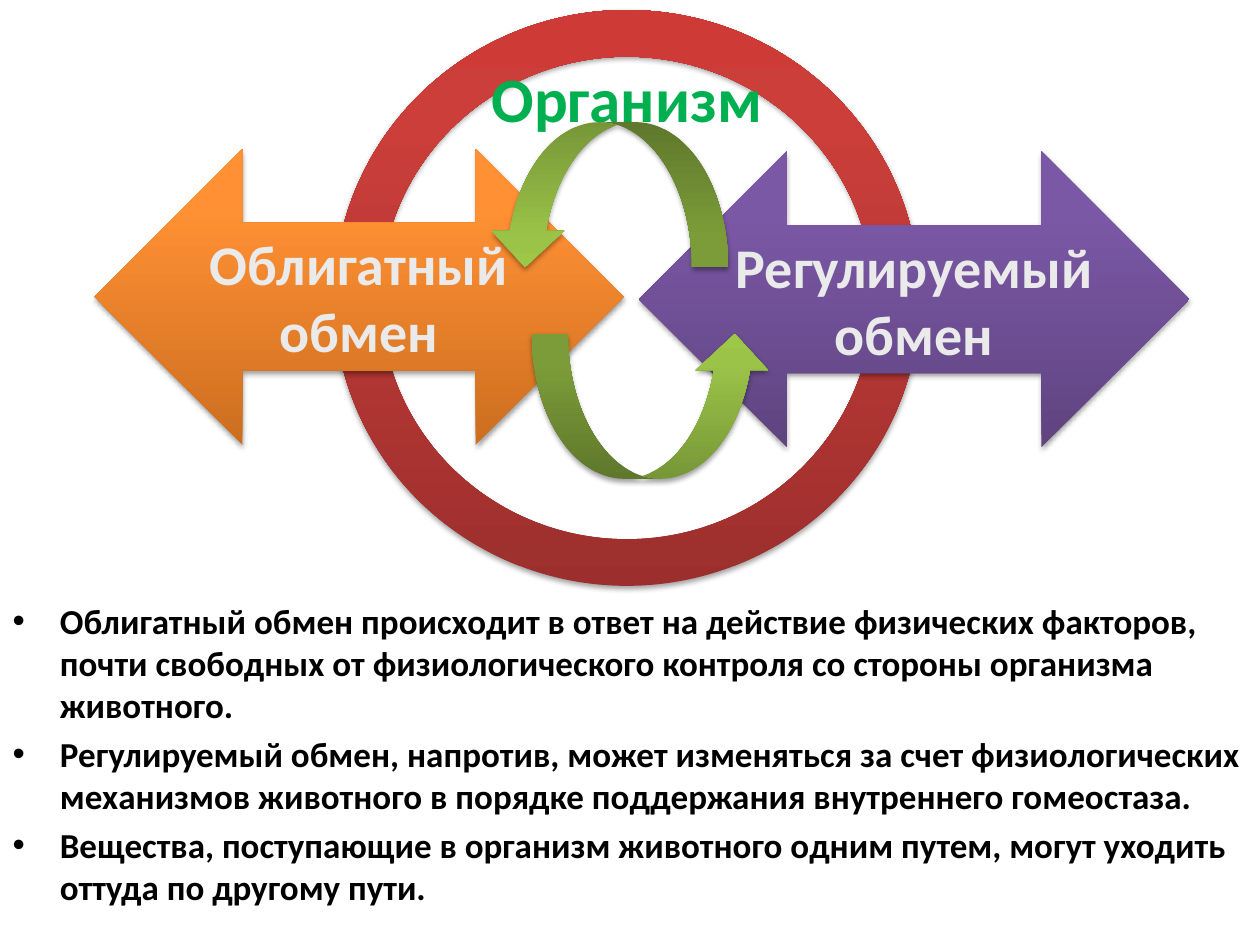
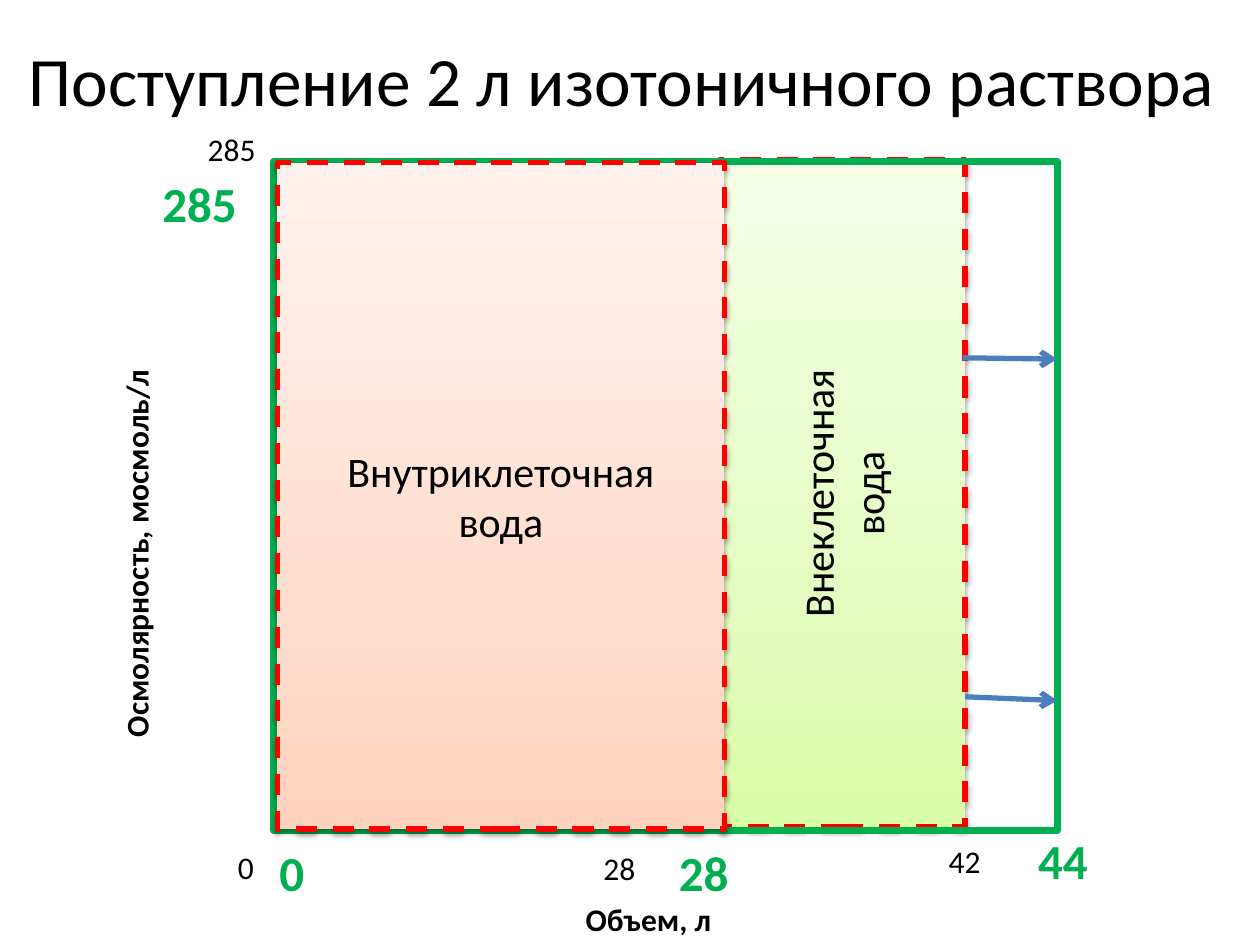
"""Builds two slides on water exchange of the organism and on isotonic intake."""
import copy

import lxml.etree
import pptx
import pptx.dml.color
import pptx.enum.dml
import pptx.enum.shapes
import pptx.enum.text
import pptx.oxml
import pptx.oxml.ns
import pptx.util

FONT = "Calibri"
BLACK, WHITE, PALE = "000000", "FFFFFF", "EAEAEA"
GREEN, RED, BLUE = "00B050", "FF0000", "4B7EBC"
SHAPES = pptx.enum.shapes.MSO_SHAPE
ANCHORS = pptx.enum.text.MSO_ANCHOR
CENTER = pptx.enum.text.PP_ALIGN.CENTER
FIT = pptx.enum.text.MSO_AUTO_SIZE
qn = pptx.oxml.ns.qn

deck = pptx.Presentation()
deck.slide_width = pptx.util.Inches(10)
deck.slide_height = pptx.util.Inches(7.5)
column = deck.slide_width / 100
row = deck.slide_height / 75


def color(value):
    """Turn a hex string into a colour."""
    return pptx.dml.color.RGBColor.from_string(value)


def add_block(page, kind, place, stops, lines=(), size=32, ink=PALE, bold=True, edge=None):
    """Add a shape with a vertical gradient, a soft shadow and centred lines."""
    left, top, width, height = place
    block = page.shapes.add_shape(
        kind, int(left * column), int(top * row), int(width * column), int(height * row))
    block.fill.gradient()
    block.fill.gradient_angle = 90
    stop_list = block._element.spPr.find(".//" + qn("a:gsLst"))
    stop_list.append(copy.deepcopy(stop_list[0]))
    for stop, (position, shade) in zip(block.fill.gradient_stops, stops):
        stop.position = position
        stop.color.rgb = color(shade)
    if edge:
        block.line.color.rgb = color(edge)
        block.line.width = pptx.util.Pt(3)
        block.line.dash_style = pptx.enum.dml.MSO_LINE.DASH
    else:
        block.line.fill.background()
    block.shadow.inherit = False
    effects = block._element.spPr.find(qn("a:effectLst"))
    shadow = lxml.etree.SubElement(
        effects, qn("a:outerShdw"), blurRad=str(pptx.util.Pt(3.1)),
        dist=str(pptx.util.Pt(1.7)), dir="5400000", rotWithShape="0")
    shade = lxml.etree.SubElement(shadow, qn("a:srgbClr"), val=BLACK)
    lxml.etree.SubElement(shade, qn("a:alpha"), val="36000")
    frame = block.text_frame
    frame.word_wrap = True
    frame.vertical_anchor = ANCHORS.MIDDLE
    for index, line in enumerate(lines):
        para = frame.add_paragraph() if index else frame.paragraphs[0]
        para.text = line
        para.alignment = CENTER
        para.font.name = FONT
        para.font.size = pptx.util.Pt(size)
        para.font.bold = bold
        para.font.color.rgb = color(ink)
    return block


exchange = deck.slides.add_slide(deck.slide_layouts[1])
intake = deck.slides.add_slide(deck.slide_layouts[5])
for page in (exchange, intake):
    page.background.fill.solid()
    page.background.fill.fore_color.rgb = color(WHITE)

heading = exchange.shapes.title._element
heading.getparent().remove(heading)
body = exchange.placeholders[1]
body.left, body.top = 0, int(47.1 * row)
body.width, body.height = deck.slide_width, int(27.9 * row)
body.text_frame.auto_size = FIT.NONE
statements = (
    "Облигатный обмен происходит в ответ на действие физических факторов, почти "
    "свободных от физиологического контроля со стороны организма животного.",
    "Регулируемый обмен, напротив, может изменяться за счет физиологических "
    "механизмов животного в порядке поддержания внутреннего гомеостаза.",
    "Вещества, поступающие в организм животного одним путем, могут уходить "
    "оттуда по другому пути.",
)
for index, statement in enumerate(statements):
    para = body.text_frame.add_paragraph() if index else body.text_frame.paragraphs[0]
    para.text = statement
    para.space_before = pptx.util.Pt(4 if index else 0)
    para.font.name = FONT
    para.font.size = pptx.util.Pt(20)
    para.font.bold = True
    para.font.color.rgb = color(BLACK)

ring = add_block(exchange, SHAPES.DONUT, (26.5, 0.8, 46.5, 45.7),
                 ((0, "9C2F2D"), (0.8, "CB3E3A"), (1, "CE3B37")))
ring.adjustments[0] = 0.081
caption = exchange.shapes.add_textbox(
    ring.left, int(4.2 * row), ring.width, int(7 * row))
caption.text_frame.word_wrap = True
para = caption.text_frame.paragraphs[0]
para.text = "Организм"
para.alignment = CENTER
para.font.name = FONT
para.font.size = pptx.util.Pt(36)
para.font.bold = True
para.font.color.rgb = color(GREEN)

add_block(exchange, SHAPES.LEFT_RIGHT_ARROW, (7.5, 11.8, 42, 23.5),
          ((0, "CC6E20"), (0.8, "FF9034"), (1, "FF9136")), ["Облигатный обмен"])
add_block(exchange, SHAPES.LEFT_RIGHT_ARROW, (50.7, 12, 43.7, 23.5),
          ((0, "5F4480"), (0.8, "7B58A6"), (1, "7C57A8")), ["Регулируемый обмен"])
for left, top, flipped in ((42.2, 26.5, False), (38.8, 9.7, True)):
    turn = add_block(exchange, SHAPES.CURVED_UP_ARROW, (left, top, 19, 11.5),
                     ((0, "779737"), (0.8, "9BC348"), (1, "9DC746")))
    if flipped:
        turn._element.spPr.xfrm.set("flipH", "1")
        turn._element.spPr.xfrm.set("flipV", "1")

title = intake.shapes.title
title.left, title.top = 0, 0
title.width, title.height = int(98.7 * column), int(12.5 * row)
title.text_frame.auto_size = FIT.NONE
title.text_frame.vertical_anchor = ANCHORS.MIDDLE
para = title.text_frame.paragraphs[0]
para.text = "Поступление 2 л изотоничного раствора"
para.alignment = CENTER
para.font.name = FONT
para.font.size = pptx.util.Pt(39.6)
para.font.color.rgb = color(BLACK)

outside = add_block(intake, SHAPES.RECTANGLE, (57.1, 12.7, 19.5, 52.9),
                    ((0, "DAFDA7"), (0.35, "E4FCC2"), (1, "F5FFE7")),
                    ["Внеклеточная", "вода"], 24, BLACK, False, RED)
outside.text_frame._txBody.bodyPr.set("vert", "vert270")

total = intake.shapes.add_shape(
    SHAPES.RECTANGLE, int(21.7 * column), int(12.8 * row), int(62.2 * column), int(53.1 * row))
total.fill.background()
total.line.color.rgb = color(GREEN)
total.line.width = pptx.util.Pt(4)
total.shadow.inherit = False

labels = (
    ("Объем, л", 45.5, 70.9, 13.3, 4, 18, BLACK, True, True),
    ("Осмолярность, мосмоль/л", 8.8, 28.5, 5, 31, 18, BLACK, True, False),
    ("0", 17.9, 66.8, 3.7, 4, 18, BLACK, False, True),
    ("0", 21.2, 66.4, 3.3, 5.7, 28, GREEN, True, True),
    ("285", 11.9, 13.3, 8, 5.7, 28, GREEN, True, False),
    ("285", 15.5, 9.8, 5.9, 4, 18, BLACK, False, False),
    ("28", 46.9, 66.9, 5.4, 4, 18, BLACK, False, True),
    ("28", 52.9, 66.4, 7.7, 5.7, 28, GREEN, True, True),
    ("42", 74.3, 66.3, 5.1, 4, 18, BLACK, False, True),
    ("44", 81.4, 65.4, 7.4, 5.7, 28, GREEN, True, True),
)
for text, left, top, width, height, size, ink, bold, wrap in labels:
    label = intake.shapes.add_textbox(
        int(left * column), int(top * row), int(width * column), int(height * row))
    label.text_frame.word_wrap = wrap
    label.text_frame.auto_size = FIT.SHAPE_TO_FIT_TEXT
    if height > width:
        if len(text) > 2:
            label.text_frame._txBody.bodyPr.set("vert", "vert270")
    para = label.text_frame.paragraphs[0]
    para.text = text
    para.font.name = FONT
    para.font.size = pptx.util.Pt(size)
    para.font.bold = bold
    para.font.color.rgb = color(ink)

for start_x, start_y, end_y in ((76.4, 28.4, 28.5), (76.6, 55.3, 55.6)):
    arrow = intake.shapes.add_connector(
        pptx.enum.shapes.MSO_CONNECTOR.STRAIGHT, int(start_x * column),
        int(start_y * row), int(83.9 * column), int(end_y * row))
    arrow.line.color.rgb = color(BLUE)
    arrow.line.width = pptx.util.Pt(3)
    lxml.etree.SubElement(arrow.line._get_or_add_ln(), qn("a:tailEnd"), type="arrow")
    lxml.etree.SubElement(arrow._element.spPr, qn("a:effectLst"))

add_block(intake, SHAPES.RECTANGLE, (22, 12.9, 35.5, 52.9),
          ((0, "FFD2BD"), (0.35, "FFDED0"), (1, "FFF2ED")),
          ["Внутриклеточная", "вода"], 24, BLACK, False, RED)

deck.save("out.pptx")
